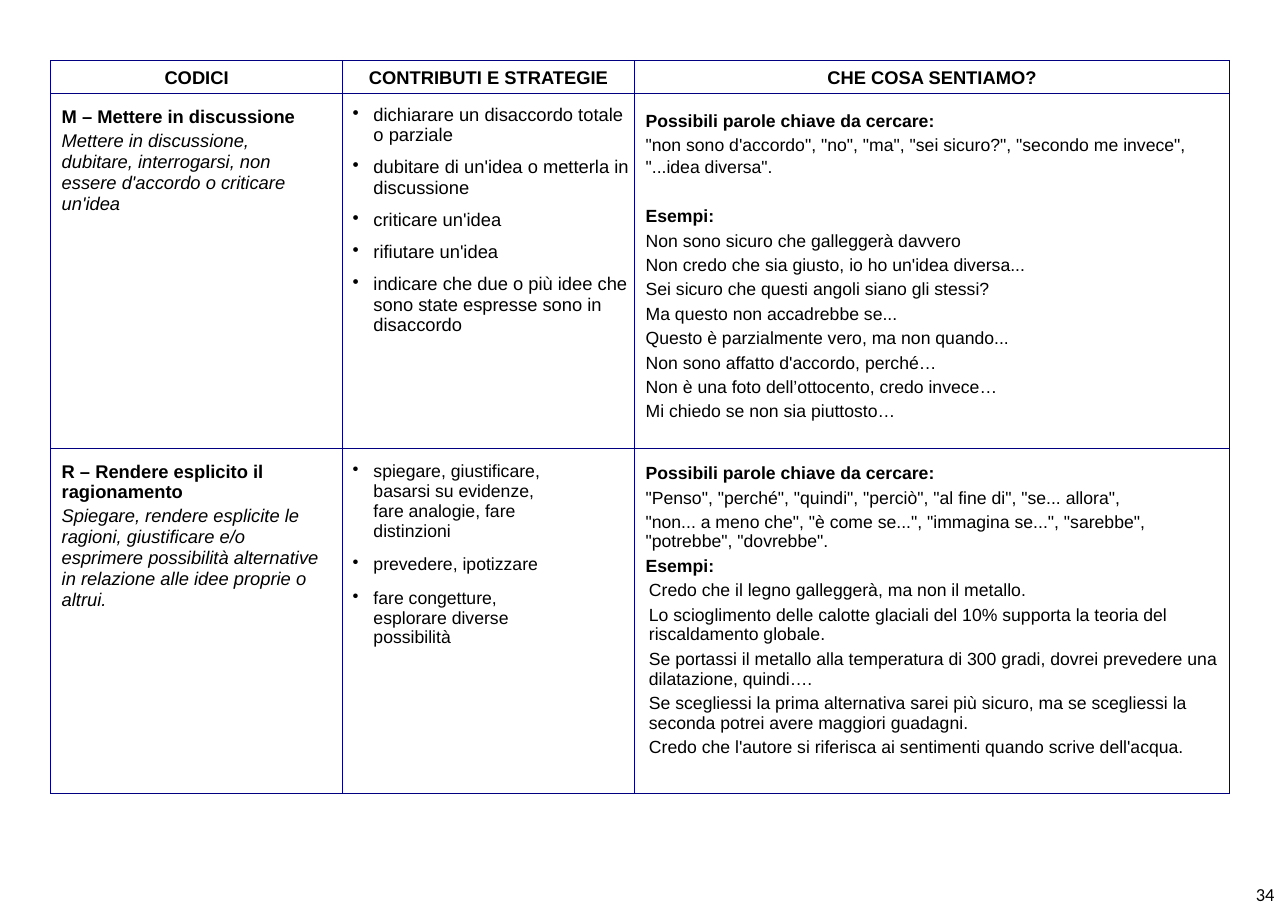
from lxml import etree
from pptx import Presentation
from pptx.dml.color import RGBColor
from pptx.enum import text
from pptx.oxml import ns
from pptx.util import Inches, Pt

BLACK = RGBColor(0, 0, 0)
NAVY = RGBColor(0, 0, 0x80)

HEADERS = ["CODICI", "CONTRIBUTI E STRATEGIE", "CHE COSA SENTIAMO?"]
COL_WIDTHS = [2.65, 2.65, 5.4]
ROW_HEIGHTS = [0.3, 3.22, 3.13]


def add_borders(cell):
    tc_pr = cell._tc.get_or_add_tcPr()
    for i, side in enumerate(["lnL", "lnR", "lnT", "lnB"]):
        ln = etree.Element(ns.qn("a:" + side), w=str(Pt(0.75)))
        fill = etree.SubElement(ln, ns.qn("a:solidFill"))
        etree.SubElement(fill, ns.qn("a:srgbClr"), val=str(NAVY))
        tc_pr.insert(i, ln)


def fill_cell(cell, lines, top, right=0):
    """Write (text, size, style, indent, line spacing, space before) lines; style is b, i, bullet or empty."""
    cell.fill.background()
    cell.margin_left = cell.margin_bottom = 0
    cell.margin_top, cell.margin_right = Inches(top), Inches(right)
    tf = cell.text_frame
    for i, (words, size, style, indent, spacing, before) in enumerate(lines):
        p = tf.add_paragraph() if i else tf.paragraphs[0]
        p.text = words
        p.line_spacing = spacing
        p.space_before = Pt(before if i else 0)
        font = p.runs[0].font
        font.name, font.size = "Arial", Pt(size)
        font.bold, font.italic = style == "b", style == "i"
        font.color.rgb = BLACK
        p_pr = p._p.get_or_add_pPr()
        p_pr.set("marL", str(Inches(indent)))
        if style == "bullet":
            p_pr.set("indent", str(Inches(-0.19)))
            color = etree.SubElement(p_pr, ns.qn("a:buClr"))
            etree.SubElement(color, ns.qn("a:srgbClr"), val=str(BLACK))
            etree.SubElement(p_pr, ns.qn("a:buChar"), char="•")
    add_borders(cell)


prs = Presentation()
prs.slide_width, prs.slide_height = Inches(11.69), Inches(8.27)
s = prs.slides.add_slide(prs.slide_layouts[6])

table = s.shapes.add_table(3, 3, Inches(0.46), Inches(0.55),
                           Inches(sum(COL_WIDTHS)), Inches(sum(ROW_HEIGHTS))).table
table.first_row = table.horz_banding = False
for col, width in zip(table.columns, COL_WIDTHS):
    col.width = Inches(width)
for row, height in zip(table.rows, ROW_HEIGHTS):
    row.height = Inches(height)

# Header row
for i, header in enumerate(HEADERS):
    cell = table.cell(0, i)
    fill_cell(cell, [(header, 12, "b", 0, 1, 0)], 0.01)
    cell.vertical_anchor = text.MSO_ANCHOR.MIDDLE
    cell.text_frame.paragraphs[0].alignment = text.PP_ALIGN.CENTER

# Codes
codes = [
    ("M – Mettere in discussione",
     "Mettere in discussione, dubitare, interrogarsi, non essere d'accordo o criticare un'idea",
     1.03, 1.6),
    ("R – Rendere esplicito il ragionamento",
     "Spiegare, rendere esplicite le ragioni, giustificare e/o esprimere possibilità "
     "alternative in relazione alle idee proprie o altrui.", 1.02, 1.8),
]
for i, (name, meaning, spacing, before) in enumerate(codes, 1):
    fill_cell(table.cell(i, 0), [(name, 12, "b", 0.1, 1, 0),
                                 (meaning, 12, "i", 0.1, spacing, before)], 0.12, 0.18)

# Contributions and strategies
doubting = [
    "dichiarare un disaccordo totale o parziale",
    "dubitare di un'idea o metterla in discussione",
    "criticare un'idea",
    "rifiutare un'idea",
    "indicare che due o più idee che sono state espresse sono in disaccordo",
]
reasoning = [
    "spiegare, giustificare, basarsi su evidenze, fare analogie, fare distinzioni",
    "prevedere, ipotizzare",
    "fare congetture, esplorare diverse possibilità",
]
fill_cell(table.cell(1, 1), [(t, 12, "bullet", 0.28, 1, 7.5) for t in doubting], 0.1)
fill_cell(table.cell(2, 1), [(t, 11.5, "bullet", 0.28, 1.01, 9) for t in reasoning], 0.12, 0.75)

# Keywords and examples
KEYWORDS = "Possibili parole chiave da cercare:"
EXAMPLES = "Esempi:"
doubt_examples = [
    "Non sono sicuro che galleggerà davvero",
    "Non credo che sia giusto, io ho un'idea diversa...",
    "Sei sicuro che questi angoli siano gli stessi?",
    "Ma questo non accadrebbe se...",
    "Questo è parzialmente vero, ma non quando...",
    "Non sono affatto d'accordo, perché…",
    "Non è una foto dell’ottocento, credo invece…",
    "Mi chiedo se non sia piuttosto…",
]
reason_keywords = [
    '"Penso", "perché", "quindi", "perciò", "al fine di", "se... allora",',
    '"non... a meno che", "è come se...", "immagina se...", "sarebbe", "potrebbe", "dovrebbe".',
]
reason_examples = [
    "Credo che il legno galleggerà, ma non il metallo.",
    "Lo scioglimento delle calotte glaciali del 10% supporta la teoria del riscaldamento globale.",
    "Se portassi il metallo alla temperatura di 300 gradi, dovrei prevedere una dilatazione, quindi….",
    "Se scegliessi la prima alternativa sarei più sicuro, ma se scegliessi la seconda "
    "potrei avere maggiori guadagni.",
    "Credo che l'autore si riferisca ai sentimenti quando scrive dell'acqua.",
]
fill_cell(table.cell(1, 2), [
    (KEYWORDS, 11.5, "b", 0.1, 1.12, 0),
    ('"non sono d\'accordo", "no", "ma", "sei sicuro?", "secondo me invece", "...idea diversa".',
     11.5, "", 0.1, 1.12, 1.6),
    (EXAMPLES, 11.5, "b", 0.1, 1.12, 17.6),
    *[(t, 11.5, "", 0.1, 1.12, 1.6) for t in doubt_examples],
], 0.14)
fill_cell(table.cell(2, 2), [
    (KEYWORDS, 11.5, "b", 0.1, 1.12, 0),
    *[(t, 11.5, "", 0.1, 1, 3) for t in reason_keywords],
    (EXAMPLES, 11.5, "b", 0.1, 1, 3),
    *[(t, 11.5, "", 0.13, 1, 3.2) for t in reason_examples],
], 0.12)

# Page number
tf = s.shapes.add_textbox(Inches(11.3), Inches(7.97), Inches(0.37), Inches(0.3)).text_frame
tf.text = "34"
font = tf.paragraphs[0].runs[0].font
font.name, font.size = "Calibri", Pt(12)
font.color.rgb = BLACK

prs.save("out.pptx")
